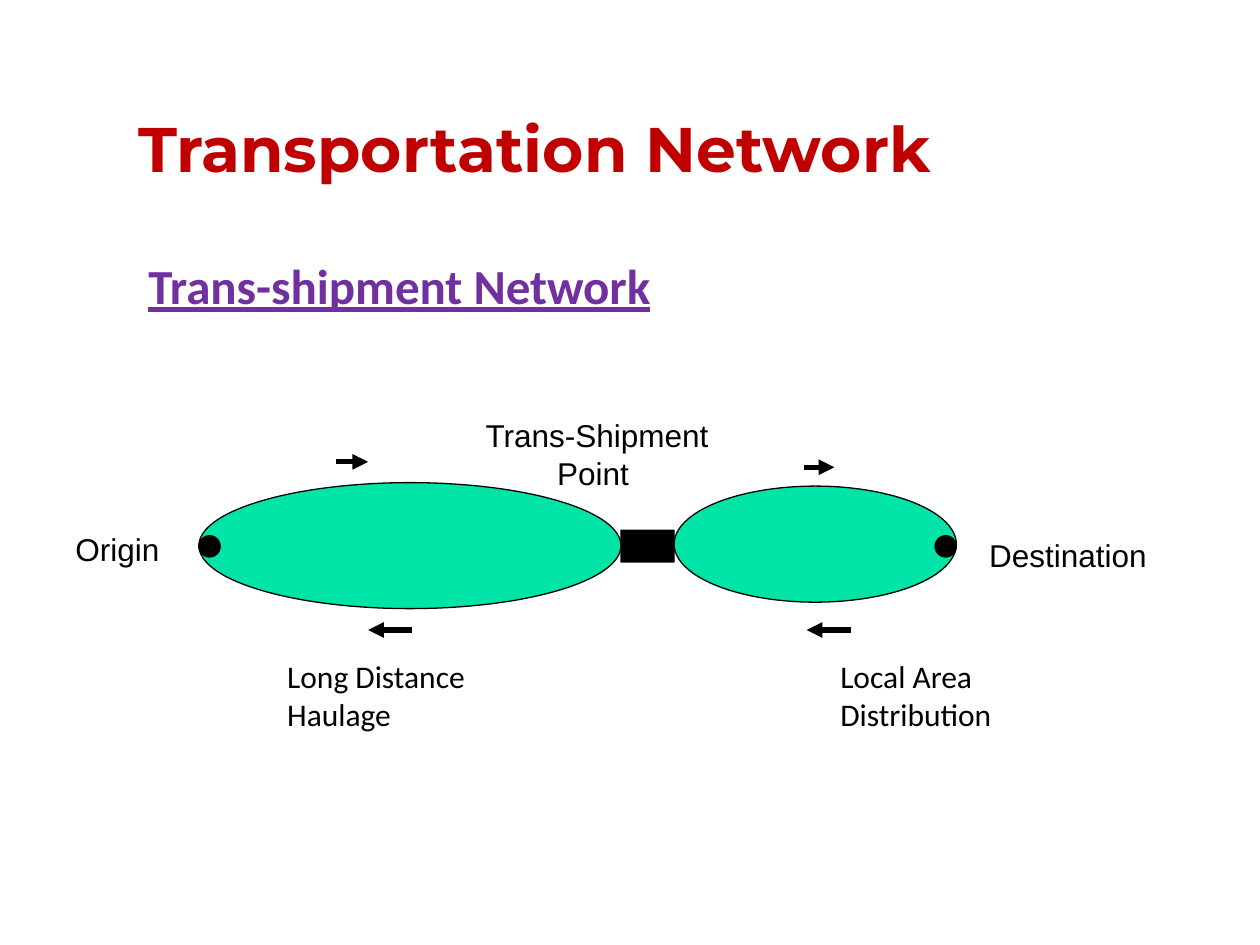
from dataclasses import dataclass

from lxml import etree
from pptx import Presentation
from pptx.dml.color import RGBColor
from pptx.enum.shapes import MSO_CONNECTOR, MSO_SHAPE
from pptx.enum.text import MSO_ANCHOR, PP_ALIGN
from pptx.oxml.ns import qn
from pptx.slide import Slide
from pptx.util import Cm, Pt

OVAL, ROUNDED = MSO_SHAPE.OVAL, MSO_SHAPE.ROUNDED_RECTANGLE
STRAIGHT = MSO_CONNECTOR.STRAIGHT
LEFT, CENTER = PP_ALIGN.LEFT, PP_ALIGN.CENTER
TOP, BOTTOM = MSO_ANCHOR.TOP, MSO_ANCHOR.BOTTOM

COLORS = {"title": "C00000", "heading": "7030A0", "leg": "00E4A8", "ink": "000000"}
TITLE = {"name": "Montserrat", "size": Pt(36), "bold": True}
HEADING = {"name": "Calibri", "size": Pt(28), "bold": True, "underline": True}
PLACE = {"name": "Arial", "size": Pt(18)}
CAPTION = {"name": "Calibri", "size": Pt(18)}


@dataclass
class NetworkPage:
    """Holds the colours and the current slide, and draws each kind of element."""

    page: Slide
    colors: dict

    def color(self, name):
        return RGBColor.from_string(self.colors[name])

    def fill_text(self, box, lines, style, color="ink", align=LEFT, anchor=TOP, spacing=1.0):
        frame = box.text_frame
        frame.word_wrap = True
        frame.vertical_anchor = anchor
        frame.text = "\n".join(lines)
        for para in frame.paragraphs:
            para.alignment = align
            para.line_spacing = spacing
            for span in para.runs:
                for key, value in style.items():
                    setattr(span.font, key, value)
                span.font.color.rgb = self.color(color)

    def title(self, text, place):
        box = self.page.shapes.title
        box.left, box.top, box.width, box.height = map(Cm, place)
        self.fill_text(box, [text], TITLE, "title", anchor=BOTTOM, spacing=0.99)

    def label(self, lines, place, style, **layout):
        box = self.page.shapes.add_textbox(*map(Cm, place))
        self.fill_text(box, lines, style, **layout)

    def shape(self, kind, place, fill="ink"):
        shape = self.page.shapes.add_shape(kind, *map(Cm, place))
        shape.shadow.inherit = False
        shape.fill.solid()
        shape.fill.fore_color.rgb = self.color(fill)
        shape.line.color.rgb = self.color("ink")
        shape.line.width = Pt(0.75)
        return shape

    def arrow(self, start, end, height):
        arrow = self.page.shapes.add_connector(
            STRAIGHT, Cm(start), Cm(height), Cm(end), Cm(height))
        arrow.line.color.rgb = self.color("ink")
        arrow.line.width = Pt(3)
        properties = arrow._element.spPr
        etree.SubElement(properties.find(qn("a:ln")), qn("a:tailEnd"), type="triangle")
        etree.SubElement(properties, qn("a:effectLst"))


def main():
    deck = Presentation()
    deck.slide_width, deck.slide_height = Cm(25.4), Cm(19.05)
    network = NetworkPage(deck.slides.add_slide(deck.slide_layouts[5]), COLORS)

    network.title("Transportation Network", (2.54, 2.13, 21.64, 1.78))
    network.label(["Trans-shipment Network"], (2.74, 5.08, 20.75, 4.37), HEADING,
                  color="heading", spacing=0.99)

    for place in ((4.01, 9.73, 8.51, 2.54), (13.59, 9.8, 5.69, 2.34)):
        network.shape(OVAL, place, "leg")
    point = network.shape(ROUNDED, (12.52, 10.69, 1.07, 0.64))
    point.adjustments[0] = 0.01
    for left in (4.01, 18.85):
        network.shape(OVAL, (left, 10.8, 0.43, 0.43))

    for start, end, height in ((6.78, 7.42, 9.31), (16.2, 16.82, 9.42),
                               (8.31, 7.42, 12.7), (17.15, 16.26, 12.7)):
        network.arrow(start, end, height)

    network.label([" Trans-Shipment", "Point"], (8.46, 8.26, 6.99, 1.78), PLACE, align=CENTER)
    network.label(["Origin"], (1.27, 10.57, 2.74, 1.02), PLACE)
    network.label(["Destination"], (19.69, 10.69, 5.08, 1.78), PLACE)
    for text, left in (("Long Distance Haulage", 5.54), ("Local Area Distribution", 16.69)):
        network.label([text], (left, 13.12, 5.87, 1.8), CAPTION)

    deck.save("out.pptx")


if __name__ == "__main__":
    main()
